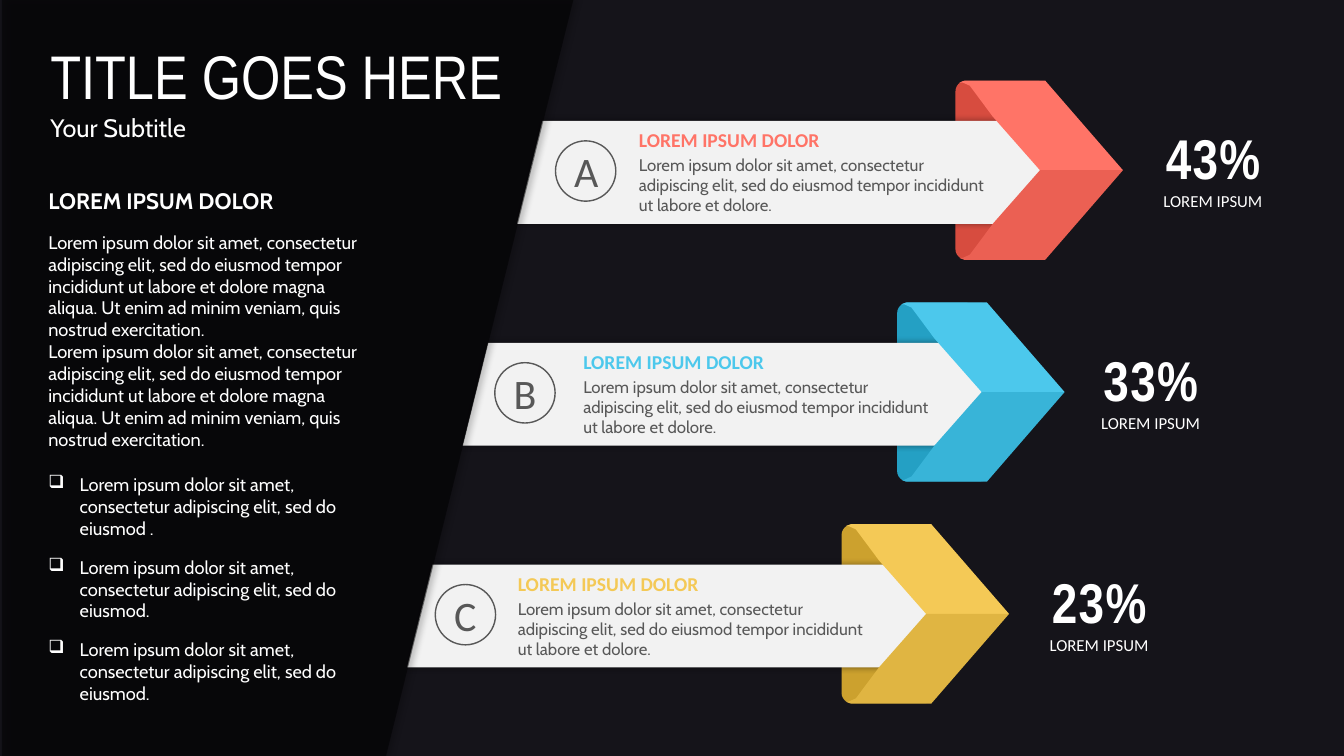
from lxml import etree
from pptx import Presentation
from pptx.dml.color import RGBColor
from pptx.enum.shapes import MSO_SHAPE
from pptx.enum.text import MSO_ANCHOR, MSO_AUTO_SIZE, PP_ALIGN
from pptx.oxml.ns import qn
from pptx.util import Cm, Pt

OVAL, ROUND = MSO_SHAPE.OVAL, MSO_SHAPE.ROUNDED_RECTANGLE
MIDDLE, GROW, CENTER = MSO_ANCHOR.MIDDLE, MSO_AUTO_SIZE.SHAPE_TO_FIT_TEXT, PP_ALIGN.CENTER
WHITE, GREY, PALE, BLACK = "FFFFFF", "585858", "F2F2F2", "000000"
NARROW, CABIN, PLAIN = "Arial Narrow", "Cabin", "Calibri"
HEAD = "LOREM IPSUM DOLOR"
LOREM = "Lorem ipsum dolor sit amet, consectetur adipiscing elit, sed do eiusmod"
CARD = LOREM + " tempor incididunt ut labore et dolore."
BODY = (LOREM + " tempor incididunt ut labore et dolore magna aliqua. "
        "Ut enim ad minim veniam, quis nostrud exercitation.")

# Letter, share, colours (upper, lower, back), then left edges in cm:
# back, banner, circle, card, share
ROWS = [
    ("A", "43%", ("FF7467", "EB6053", "D74C3F"), (24.08, 13.03, 14.0, 15.85, 28.98)),
    ("B", "33%", ("4CC8EC", "38B4D8", "24A0C4"), (22.61, 11.66, 12.47, 14.45, 27.41)),
    ("C", "23%", ("F4C956", "E0B542", "CCA12E"), (21.21, 10.26, 10.97, 12.8, 26.11)),
]
FIRST, STEP = 4.29, 5.59
# Upper half of an arrow, measured from its back's left edge and the row's middle
FLAP = [(0.1, -2.21), (0.23, -2.26), (2.26, -2.26), (4.22, 0),
        (2.13, 0), (0.94, -1.35), (0.36, -2.13), (0.18, -2.21)]

hue = RGBColor.from_string


def draw(shapes, points, color):
    """Add a filled polygon without outline; points are in cm."""
    spots = [(Cm(x), Cm(y)) for x, y in points]
    pen = shapes.build_freeform(*spots[0])
    pen.add_line_segments(spots[1:])
    shape = pen.convert_to_shape()
    shape.fill.solid()
    shape.fill.fore_color.rgb = hue(color)
    shape.line.fill.background()
    shape.shadow.inherit = False
    return shape


def write(place, lines):
    """Add a text box; a line is (text, size, font, color, bold, space before, bullet)."""
    frame = slide.shapes.add_textbox(*map(Cm, place)).text_frame
    frame.word_wrap = True
    frame.auto_size = GROW
    frame.text = "\n".join(line[0] for line in lines)
    for para, (_, size, face, color, bold, gap, mark) in zip(frame.paragraphs, lines):
        if mark:
            props = para._p.get_or_add_pPr()
            props.set("marL", str(Cm(0.79)))
            props.set("indent", str(-Cm(0.79)))
            etree.SubElement(props, qn("a:buChar")).set("char", mark)
        if gap:
            para.space_before = Pt(gap)
        font = para.runs[0].font
        font.size, font.name, font.bold = Pt(size), face, bold
        font.color.rgb = hue(color)
    return frame


deck = Presentation()
deck.slide_width, deck.slide_height = Cm(33.87), Cm(19.05)
slide = deck.slides.add_slide(deck.slide_layouts[6])
slide.background.fill.solid()
slide.background.fill.fore_color.rgb = hue("15141A")
casts = []

for row, (letter, share, colors, lefts) in enumerate(ROWS):
    mid = FIRST + row * STEP
    back, left, ring, card, stat = lefts
    upper, lower, dark = colors

    arrow = slide.shapes.add_group_shape().shapes
    fold = arrow.add_shape(ROUND, Cm(back), Cm(mid - 2.25), Cm(2.36), Cm(4.5))
    fold.adjustments[0] = 0.11
    fold.fill.solid()
    fold.fill.fore_color.rgb = hue(dark)
    fold.line.fill.background()
    fold.shadow.inherit = False
    top, end, right = mid - 1.24, mid + 1.35, left + 13.36
    banner = draw(arrow, [(left + 0.64, top), (right, top), (right, end), (left, end)], PALE)
    casts.append((banner, 5, 0))
    for sign, color in ((1, upper), (-1, lower)):
        draw(arrow, [(back + x, mid + sign * y) for x, y in FLAP], color)

    badge = slide.shapes.add_shape(OVAL, Cm(ring), Cm(mid - 0.74), Cm(1.52), Cm(1.52))
    badge.fill.background()
    badge.line.color.rgb = hue(GREY)
    badge.line.width = Pt(1)
    badge.shadow.inherit = False
    badge.text_frame.text = letter
    badge.text_frame.vertical_anchor = MIDDLE
    para = badge.text_frame.paragraphs[0]
    para.alignment = CENTER
    font = para.runs[0].font
    font.size, font.name = Pt(30), PLAIN
    font.color.rgb = hue(GREY)

    write((card, mid - 1.18, 9.45, 2.49), [
        (HEAD, 14, PLAIN, upper, True, 0, None),
        (CARD, 12, CABIN, GREY, False, 2, None),
    ])
    frame = write((stat, mid - 1.25, 3.18, 2.39), [
        (share, 40, NARROW, WHITE, True, 0, None),
        ("LOREM IPSUM", 12, PLAIN, WHITE, False, 0, None),
    ])
    frame.margin_left = frame.margin_right = Cm(0.18)
    frame.margin_top = frame.margin_bottom = Cm(0.08)
    for para in frame.paragraphs:
        para.alignment = CENTER
    frame.paragraphs[0].runs[0].font._element.set("spc", "100")

panel = draw(slide.shapes, [(0.05, 0), (14.45, 0), (9.73, 19.05), (0.05, 19.05)], BLACK)
tint = panel._element.spPr.find(qn("a:solidFill"))[0]
etree.SubElement(tint, qn("a:alpha")).set("val", "50000")
casts.append((panel, 4, 3))

for shape, blur, dist in casts:
    effects = shape._element.spPr.find(qn("a:effectLst"))
    cast = etree.SubElement(effects, qn("a:outerShdw"), blurRad=str(Pt(blur)),
                            dist=str(Pt(dist)), dir="0", algn="ctr", rotWithShape="0")
    tint = etree.SubElement(cast, qn("a:srgbClr"), val=BLACK)
    etree.SubElement(tint, qn("a:alpha"), val="40000")

write((0.97, 4.6, 8.76, 13.39), [
    (HEAD, 16, CABIN, WHITE, True, 0, None),
    (BODY, 13, CABIN, WHITE, False, 12, None),
    (BODY, 13, CABIN, WHITE, False, 0, None),
    (LOREM + " .", 13, CABIN, WHITE, False, 17, "❑"),
    (LOREM + ".", 13, CABIN, WHITE, False, 12, "❑"),
    (LOREM + ".", 13, CABIN, WHITE, False, 12, "❑"),
])
write((1.02, 0.84, 16.51, 2.9), [
    ("TITLE GOES HERE", 44, NARROW, WHITE, False, 0, None),
    ("Your Subtitle", 18, CABIN, WHITE, False, 0, None),
])

deck.save("out.pptx")
